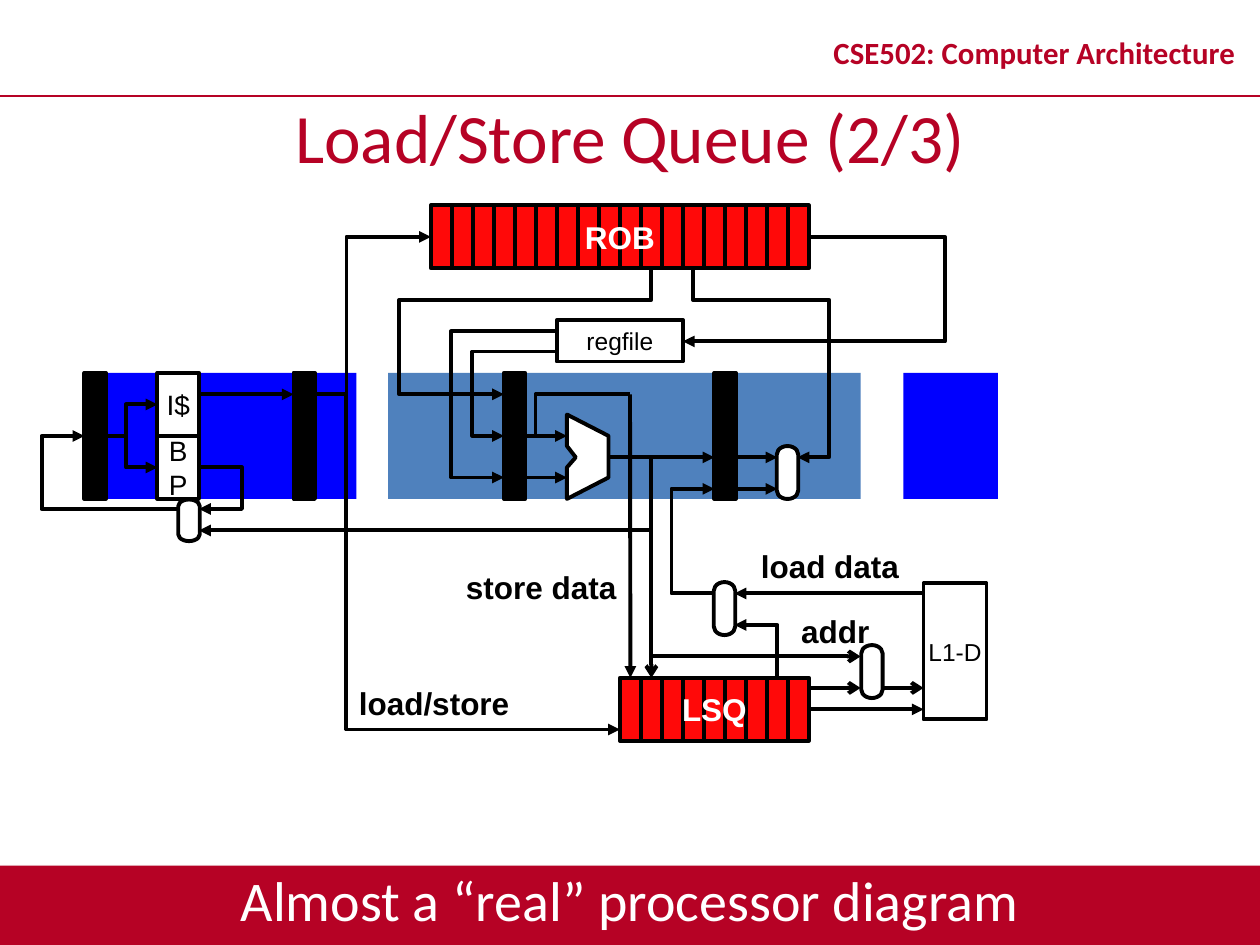
from dataclasses import dataclass
from typing import Optional

from lxml.etree import SubElement
from pptx import Presentation
from pptx.dml.color import RGBColor
from pptx.enum.shapes import MSO_CONNECTOR, MSO_SHAPE
from pptx.enum.text import MSO_ANCHOR, PP_ALIGN
from pptx.oxml.ns import qn
from pptx.util import Inches, Pt

TOP, RIGHT = 0, 3  # connection sites


@dataclass(frozen=True)
class Theme:
    crimson: str = "B60225"
    steel: str = "4F81BD"
    blue: str = "0000FF"
    red: str = "FF0909"
    black: str = "000000"
    white: str = "FFFFFF"
    heading_font: str = "Calibri"
    diagram_font: str = "Arial"
    title_size: float = 39.6
    takeaway_size: float = 32
    course_size: float = 17.6
    label_size: float = 18
    stage_size: float = 16
    unit_size: float = 14
    rule: float = 1
    stroke: float = 2.25


THEME = Theme()


@dataclass(frozen=True)
class Box:
    left: float
    top: float
    width: float
    height: float
    fill: str = THEME.white
    outlined: bool = True
    text: str = ""
    size: float = THEME.unit_size


@dataclass(frozen=True)
class Label:
    text: str
    left: float
    top: float
    width: float
    height: float
    size: float = THEME.label_size
    color: str = THEME.black
    font: str = THEME.diagram_font
    bold: bool = True
    wrap: bool = False
    anchor: MSO_ANCHOR = MSO_ANCHOR.TOP
    align: PP_ALIGN = PP_ALIGN.LEFT
    spacing: Optional[float] = None


@dataclass(frozen=True)
class Wire:
    points: list
    arrow: Optional[str] = "triangle"
    start: Optional[tuple] = None  # (shape, connection site)
    end: Optional[tuple] = None


def rgb(color: str) -> RGBColor:
    return RGBColor.from_string(color)


def inches(*values: float) -> list:
    return [Inches(value) for value in values]


def paint(shape, fill: Optional[str], outlined: bool = True) -> None:
    shape.shadow.inherit = False
    if fill:
        shape.fill.solid()
        shape.fill.fore_color.rgb = rgb(fill)
    else:
        shape.fill.background()
    if outlined:
        stroke(shape.line)
    else:
        shape.line.fill.background()


def stroke(line, color: str = THEME.black, width: float = THEME.stroke) -> None:
    line.color.rgb = rgb(color)
    line.width = Pt(width)


def write(shape, label) -> None:
    """Set the text, paragraph and font formats that a label describes."""
    frame = shape.text_frame
    frame.text = label.text
    frame.word_wrap = label.wrap
    frame.vertical_anchor = label.anchor
    formats = {"size": Pt(label.size), "name": label.font, "bold": label.bold}
    for paragraph in frame.paragraphs:
        paragraph.alignment = label.align
        paragraph.line_spacing = label.spacing
        for run in paragraph.runs:
            for attribute, value in formats.items():
                setattr(run.font, attribute, value)
            run.font.color.rgb = rgb(label.color)


def add_label(shapes, label: Label) -> None:
    write(shapes.add_textbox(*inches(label.left, label.top, label.width, label.height)), label)


def add_box(shapes, box: Box):
    frame = (box.left, box.top, box.width, box.height)
    shape = shapes.add_shape(MSO_SHAPE.RECTANGLE, *inches(*frame))
    paint(shape, box.fill, box.outlined)
    if box.text:
        write(shape, Label(box.text, *frame, size=box.size, bold=False,
                           anchor=MSO_ANCHOR.MIDDLE, align=PP_ALIGN.CENTER))
    return shape


def add_mux(shapes, center_x: float, center_y: float, length: float) -> None:
    thickness = 0.17
    mux = shapes.add_shape(MSO_SHAPE.FLOWCHART_TERMINATOR, *inches(
        center_x - length / 2, center_y - thickness / 2, length, thickness))
    mux.rotation = 90
    paint(mux, THEME.white)


def add_queue(shapes, left: float, top: float, width: float, slots: int) -> list:
    pitch = width / slots
    return [add_box(shapes, Box(left + i * pitch, top, pitch, 0.5, THEME.red))
            for i in range(slots)]


def add_path(shapes, points: list, closed: bool = False):
    corners = [inches(*point) for point in points]
    builder = shapes.build_freeform(*corners[0], scale=1.0)
    builder.add_line_segments(corners[1:], close=closed)
    shape = builder.convert_to_shape()
    paint(shape, THEME.white if closed else None)
    return shape


def add_straight(shapes, start: tuple, end: tuple):
    connector = shapes.add_connector(MSO_CONNECTOR.STRAIGHT, *inches(*start, *end))
    SubElement(connector.element.spPr, qn("a:effectLst"))
    stroke(connector.line)
    return connector


def add_wire(shapes, wire: Wire) -> None:
    if len(wire.points) == 2:
        line = add_straight(shapes, *wire.points)
        if wire.start:
            line.begin_connect(*wire.start)
        if wire.end:
            line.end_connect(*wire.end)
    else:
        line = add_path(shapes, wire.points)
    if wire.arrow:
        SubElement(line.line._get_or_add_ln(), qn("a:tailEnd"), type=wire.arrow)


def add_banner(shapes) -> None:
    banner = add_box(shapes, Box(0, 6.87, 10, 0.63, THEME.crimson, False))
    effects = banner.element.spPr.find(qn("a:effectLst"))
    shadow = SubElement(effects, qn("a:outerShdw"), blurRad=str(Pt(3.1)), dist=str(Pt(1.8)),
                        dir="5400000", rotWithShape="0")
    tint = SubElement(shadow, qn("a:srgbClr"), val=THEME.black)
    SubElement(tint, qn("a:alpha"), val="35000")


def main() -> None:
    deck = Presentation()
    deck.slide_width, deck.slide_height = inches(10, 7.5)
    shapes = deck.slides.add_slide(deck.slide_layouts[6]).shapes

    add_banner(shapes)
    stroke(add_straight(shapes, (0, 0.76), (10, 0.76)).line, THEME.crimson, THEME.rule)
    heading = dict(font=THEME.heading_font, wrap=True, align=PP_ALIGN.CENTER)
    middle = dict(anchor=MSO_ANCHOR.MIDDLE, align=PP_ALIGN.CENTER)

    for left, width, fill in [(3.08, 3.75, THEME.steel), (0.83, 2, THEME.blue),
                              (7.17, 0.75, THEME.blue)]:
        add_box(shapes, Box(left, 2.96, width, 1, fill, False))
    fetch_latch, _, issue_latch, _ = [
        add_box(shapes, Box(left, 2.96, 0.17, 1, THEME.black)) for left in (0.67, 2.33, 4, 5.67)]
    for mux in [(6.25, 3.75, 0.42), (1.5, 4.13, 0.33), (5.75, 4.83, 0.42), (6.92, 5.33, 0.42)]:
        add_mux(shapes, *mux)
    for unit in [Box(4.42, 2.54, 1, 0.33, text="regfile"),
                 Box(7.33, 4.63, 0.5, 1.08, text="L1-D"),
                 Box(1.25, 2.96, 0.33, 0.5, text="I$", size=THEME.stage_size),
                 Box(1.25, 3.46, 0.33, 0.5, text="B\nP", size=THEME.stage_size)]:
        add_box(shapes, unit)
    add_path(shapes, [(4.5, 3.29), (4.5, 3.54), (4.57, 3.63), (4.5, 3.71), (4.5, 3.96),
                      (4.83, 3.79), (4.83, 3.46)], closed=True)
    add_queue(shapes, 3.42, 1.63, 3, 18)
    lsq = add_queue(shapes, 4.92, 5.38, 1.5, 9)

    front_end = [
        Wire([(0.83, 3.46), (1, 3.46)], None, start=(fetch_latch, RIGHT)),
        Wire([(1, 3.54), (1, 3.21), (1.25, 3.21)]),
        Wire([(1, 3.54), (1, 3.71), (1.25, 3.71)]),
        Wire([(1.58, 3.13), (2.33, 3.13)]),
        Wire([(1.58, 3.71), (1.92, 3.71), (1.92, 4.04), (1.58, 4.04)]),
        Wire([(5.17, 3.63), (5.17, 4.21), (1.58, 4.21)]),
        Wire([(1.42, 4.04), (0.33, 4.04), (0.33, 3.46), (0.67, 3.46)]),
    ]
    execute = [
        Wire([(4.17, 3.46), (4.5, 3.46)], start=(issue_latch, RIGHT)),
        Wire([(4.17, 3.79), (4.5, 3.79)]),
        Wire([(4.25, 3.46), (4.25, 3.13), (5, 3.13)], None),
        Wire([(4.83, 3.63), (5.67, 3.63)]),
        Wire([(5.83, 3.63), (6.17, 3.63)]),
        Wire([(5.83, 3.88), (6.17, 3.88)]),
        Wire([(4.42, 2.79), (3.75, 2.79), (3.75, 3.46), (4, 3.46)]),
        Wire([(4.42, 2.63), (3.58, 2.63), (3.58, 3.79), (4, 3.79)]),
    ]
    reorder = [
        Wire([(2.5, 3.13), (2.75, 3.13), (2.75, 1.88), (3.42, 1.88)]),
        Wire([(5.17, 2.13), (5.17, 2.38), (3.17, 2.38), (3.17, 3.13), (4, 3.13)]),
        Wire([(5.5, 2.13), (5.5, 2.38), (6.58, 2.38), (6.58, 3.63), (6.33, 3.63)]),
        Wire([(6.42, 1.88), (7.5, 1.88), (7.5, 2.71), (5.42, 2.71)]),
    ]
    memory = [
        Wire([(2.75, 3.13), (2.75, 5.79), (4.92, 5.79)]),
        Wire([(5, 3.13), (5, 5.38)], end=(lsq[0], TOP)),
        Wire([(5.17, 3.63), (5.17, 5.38)], "arrow", end=(lsq[1], TOP)),
        Wire([(5.17, 5.21), (6.83, 5.21)], "arrow"),
        Wire([(6.42, 5.46), (6.83, 5.46)], "arrow"),
        Wire([(7, 5.46), (7.33, 5.46)], "arrow"),
        Wire([(6.42, 5.63), (7.33, 5.63)], start=(lsq[-1], RIGHT)),
        Wire([(7.33, 4.71), (5.83, 4.71)]),
        Wire([(5.67, 4.71), (5.33, 4.71), (5.33, 3.88), (5.67, 3.88)]),
        Wire([(6.17, 5.38), (6.17, 4.96), (5.83, 4.96)]),
    ]
    for wire in front_end + execute + reorder + memory:
        add_wire(shapes, wire)

    for label in [
        Label("CSE502: Computer Architecture", 6.42, 0.13, 3.58, 0.63, THEME.course_size,
              THEME.crimson, spacing=0.8, **(heading | middle)),
        Label("Load/Store Queue (2/3)", 0, 0.76, 10, 0.63, THEME.title_size,
              THEME.crimson, bold=False, **(heading | middle)),
        Label("ROB", 3.42, 1.63, 3, 0.5, color=THEME.white, **middle),
        Label("LSQ", 4.92, 5.38, 1.5, 0.5, color=THEME.white, **middle),
        Label("load/store", 2.75, 5.38, 1.4, 0.4),
        Label("store data", 3.6, 4.46, 1.4, 0.4),
        Label("addr", 6.26, 4.81, 0.74, 0.4),
        Label("load data", 5.94, 4.29, 1.3, 0.4),
        Label("Almost a “real” processor diagram", 0, 6.82, 10, 0.63, THEME.takeaway_size,
              THEME.white, bold=False, **heading),
    ]:
        add_label(shapes, label)

    deck.save("out.pptx")


if __name__ == "__main__":
    main()
